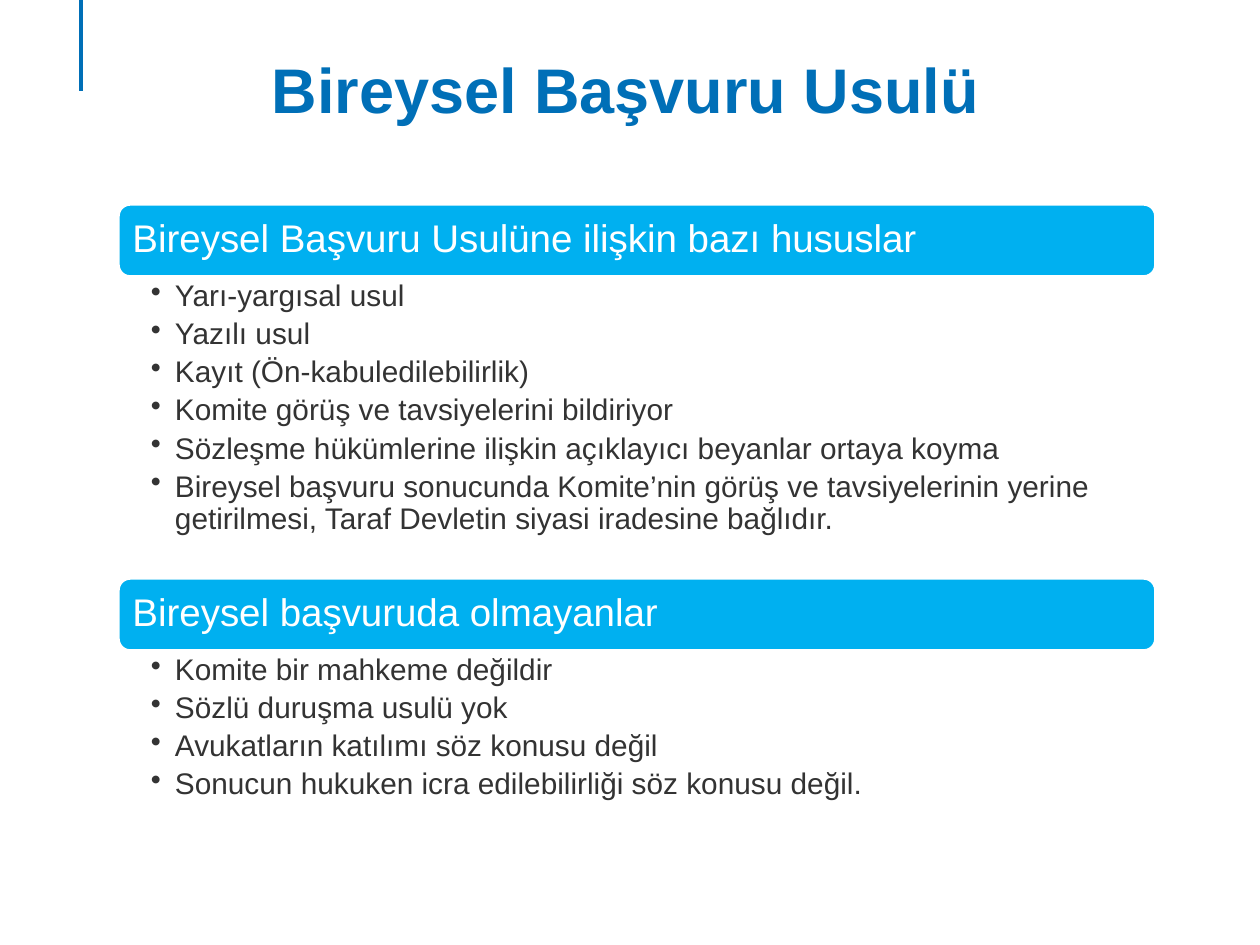
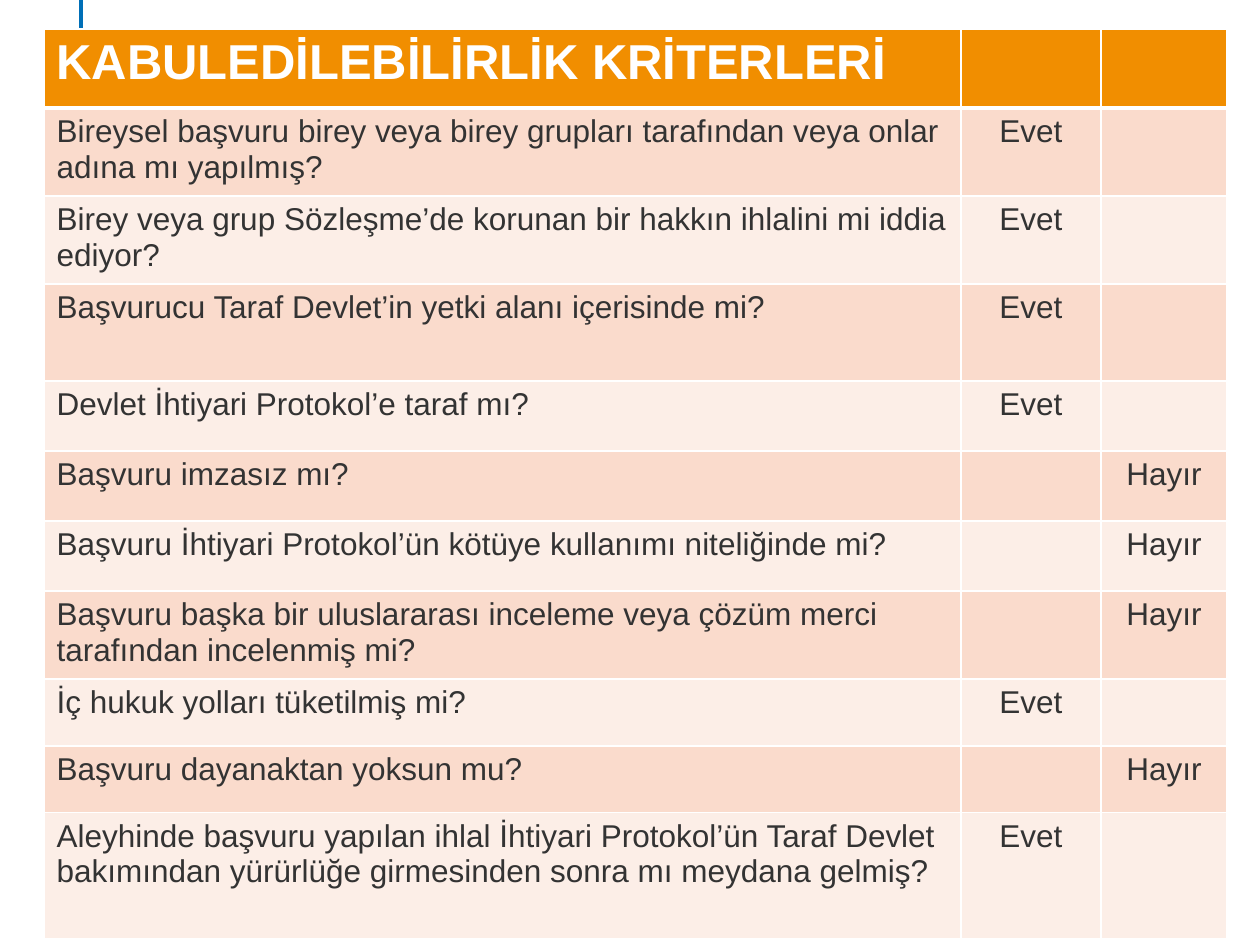
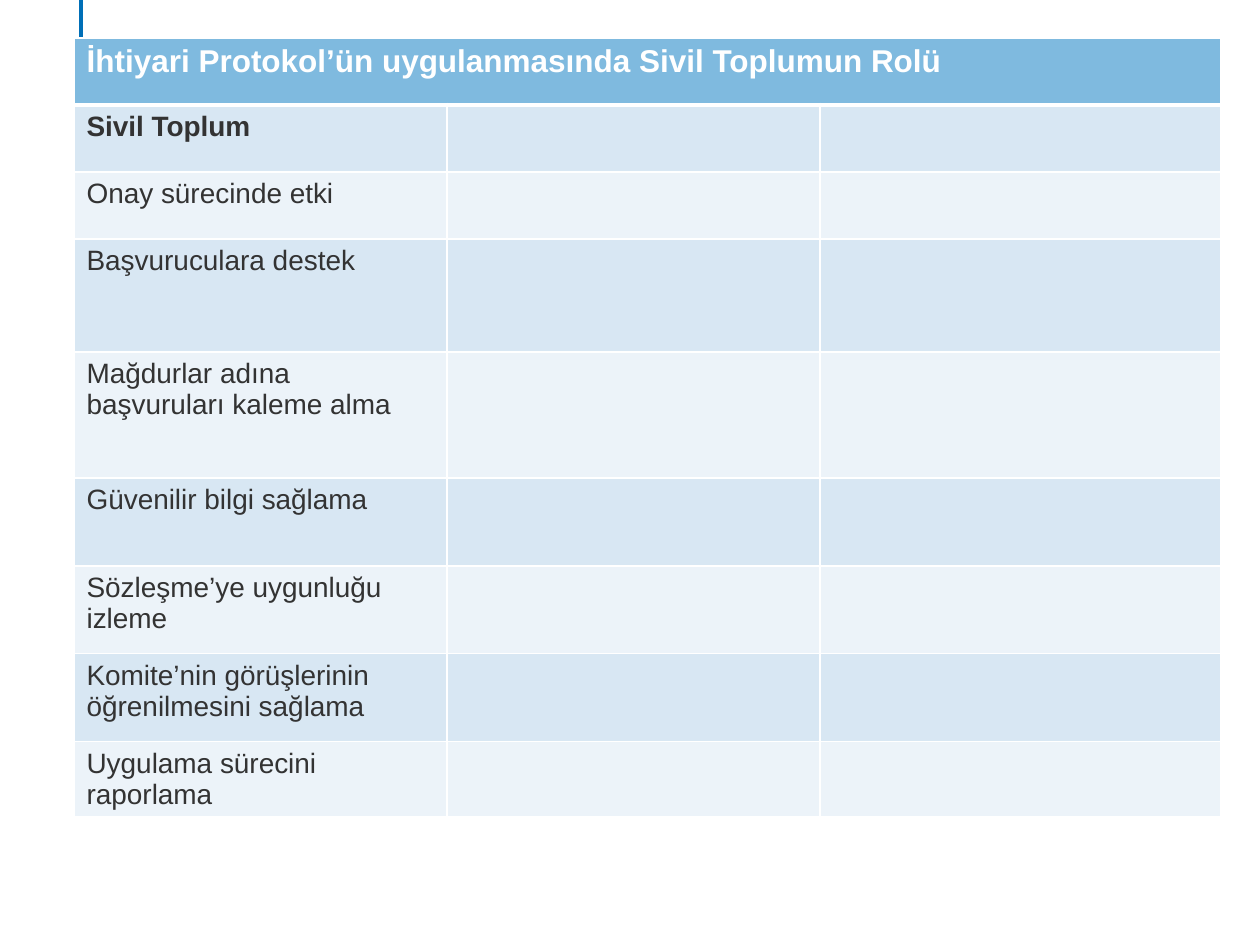
from dataclasses import dataclass

from lxml.etree import SubElement
from pptx import Presentation
from pptx.dml.color import RGBColor
from pptx.enum.shapes import MSO_CONNECTOR, MSO_SHAPE
from pptx.enum.text import MSO_ANCHOR, PP_ALIGN
from pptx.oxml.ns import qn
from pptx.util import Pt

PX = 914400 // 126  # EMU in one px


@dataclass(frozen=True)
class Theme:
    font: str = "Arial"
    blue: str = "006FB7"
    sky: str = "00B0F0"
    white: str = "FFFFFF"
    ink: str = "333333"
    warm: tuple = ("F18E00", "FADBCC", "FCEEE7")  # head, odd row, even row
    cool: tuple = ("7FBADF", "D8E7F3", "ECF3F9")
    title: int = 36
    banner: int = 28
    bar: int = 22
    body: int = 18
    item: int = 17
    small: int = 16


theme = Theme()


def write(par, text, size, color, bold=False, align=PP_ALIGN.LEFT):
    par.text = text
    par.alignment = align
    font = par.font
    font.name, font.size, font.bold = theme.font, Pt(size), bold
    font.color.rgb = RGBColor.from_string(color)


def add_grid(slide, left, top, cols, heights, rows, fills, sizes, strong=1):
    """Draw a ruled table; sizes are (head, body), strong counts the bold rows."""
    grid = slide.shapes.add_table(
        len(rows), len(cols), left * PX, top * PX, sum(cols) * PX, sum(heights) * PX).table
    grid.horz_banding = False
    for col, width in zip(grid.columns, cols):
        col.width = width * PX
    for r, (texts, height) in enumerate(zip(rows, heights)):
        grid.rows[r].height = height * PX
        for c, text in enumerate(texts):
            cell = grid.cell(r, c)
            props = cell._tc.get_or_add_tcPr()
            for side in ("lnL", "lnR", "lnT", "lnB"):
                thick = (r, side) in ((0, "lnB"), (1, "lnT"))
                edge = SubElement(props, qn("a:" + side), w=str(Pt(3 if thick else 1)))
                paint = SubElement(edge, qn("a:solidFill"))
                SubElement(paint, qn("a:srgbClr"), val=theme.white)
            cell.fill.solid()
            shade = fills[0] if r == 0 else fills[2 - r % 2]
            cell.fill.fore_color.rgb = RGBColor.from_string(shade)
            if text:
                write(cell.text_frame.paragraphs[0], text, sizes[min(r, 1)],
                      theme.ink if r else theme.white, r < strong,
                      PP_ALIGN.CENTER if c else PP_ALIGN.LEFT)
    return grid


deck = Presentation()
deck.slide_width, deck.slide_height = 1260 * PX, 945 * PX

# Slides with the shared accent line
slides = []
for _ in range(3):
    slide = deck.slides.add_slide(deck.slide_layouts[6])
    line = slide.shapes.add_connector(MSO_CONNECTOR.STRAIGHT, 81 * PX, 0, 81 * PX, 91 * PX)
    line.line.color.rgb = RGBColor.from_string(theme.blue)
    line.line.width = Pt(2)
    SubElement(line._element.spPr, qn("a:effectLst"))
    slides.append(slide)
usage, criteria, civil = slides

# Slide 1: title
box = usage.shapes.add_textbox(44 * PX, 38 * PX, 1163 * PX, 150 * PX)
frame = box.text_frame
frame.word_wrap = True
frame.margin_top = 13 * PX
write(frame.paragraphs[0], "Bireysel Başvuru Usulü", theme.title, theme.blue, True,
      PP_ALIGN.CENTER)

# Slide 1: bars, each with its list below
parts = [
    (204, 301, "Bireysel Başvuru Usulüne ilişkin bazı hususlar", [
        "Yarı-yargısal usul",
        "Yazılı usul",
        "Kayıt (Ön-kabuledilebilirlik)",
        "Komite görüş ve tavsiyelerini bildiriyor",
        "Sözleşme hükümlerine ilişkin açıklayıcı beyanlar ortaya koyma",
        "Bireysel başvuru sonucunda Komite’nin görüş ve tavsiyelerinin yerine "
        "getirilmesi, Taraf Devletin siyasi iradesine bağlıdır.",
    ]),
    (578, 154, "Bireysel başvuruda olmayanlar", [
        "Komite bir mahkeme değildir",
        "Sözlü duruşma usulü yok",
        "Avukatların katılımı söz konusu değil",
        "Sonucun hukuken icra edilebilirliği söz konusu değil.",
    ]),
]
for top, depth, head, items in parts:
    bar = usage.shapes.add_shape(
        MSO_SHAPE.ROUNDED_RECTANGLE, 118 * PX, top * PX, 1038 * PX, 73 * PX)
    bar.shadow.inherit = False
    bar.fill.solid()
    bar.fill.fore_color.rgb = RGBColor.from_string(theme.sky)
    bar.line.color.rgb = RGBColor.from_string(theme.white)
    bar.line.width = Pt(2)
    frame = bar.text_frame
    frame.vertical_anchor = MSO_ANCHOR.MIDDLE
    frame.margin_left = 11 * PX
    write(frame.paragraphs[0], head, theme.bar, theme.white)
    frame.paragraphs[0].line_spacing = 0.9

    box = usage.shapes.add_textbox(118 * PX, (top + 73) * PX, 1038 * PX, depth * PX)
    frame = box.text_frame
    frame.word_wrap = True
    frame.margin_left, frame.margin_right = 33 * PX, 21 * PX
    frame.margin_top = frame.margin_bottom = 4 * PX
    for i, item in enumerate(items):
        par = frame.add_paragraph() if i else frame.paragraphs[0]
        props = par._p.get_or_add_pPr()
        props.set("marL", str(24 * PX))
        props.set("indent", str(-24 * PX))
        SubElement(props, qn("a:buChar"), char="•")
        par.line_spacing = 0.9
        par.space_after = Pt(3.4)
        write(par, item, theme.item, theme.ink)

# Slide 2: admissibility criteria
yes, no = ("Evet", ""), ("", "Hayır")
tests = [
    ("KABULEDİLEBİLİRLİK KRİTERLERİ", "", ""),
    ("Bireysel başvuru birey veya birey grupları tarafından veya onlar adına mı yapılmış?", *yes),
    ("Birey veya grup Sözleşme’de korunan bir hakkın ihlalini mi iddia ediyor?", *yes),
    ("Başvurucu Taraf Devlet’in yetki alanı içerisinde mi?", *yes),
    ("Devlet İhtiyari Protokol’e taraf mı?", *yes),
    ("Başvuru imzasız mı?", *no),
    ("Başvuru İhtiyari Protokol’ün kötüye kullanımı niteliğinde mi?", *no),
    ("Başvuru başka bir uluslararası inceleme veya çözüm merci tarafından incelenmiş mi?", *no),
    ("İç hukuk yolları tüketilmiş mi?", *yes),
    ("Başvuru dayanaktan yoksun mu?", *no),
    ("Aleyhinde başvuru yapılan ihlal İhtiyari Protokol’ün Taraf Devlet bakımından "
     "yürürlüğe girmesinden sonra mı meydana gelmiş?", *yes),
]
add_grid(criteria, 44, 29, (917, 140, 126),
         (79, 88, 88, 97, 70, 70, 70, 88, 67, 67, 126),
         tests, theme.warm, (theme.banner, theme.body))

# Slide 3: role of civil society
roles = [
    "İhtiyari Protokol’ün uygulanmasında Sivil Toplumun Rolü",
    "Sivil Toplum",
    "Onay sürecinde etki",
    "Başvuruculara destek",
    "Mağdurlar adına başvuruları kaleme alma",
    "Güvenilir bilgi sağlama",
    "Sözleşme’ye uygunluğu izleme",
    "Komite’nin görüşlerinin öğrenilmesini sağlama",
    "Uygulama sürecini raporlama",
]
grid = add_grid(civil, 74, 38, (373, 373, 401),
                (67, 67, 67, 113, 126, 88, 88, 88, 75),
                [(role, "", "") for role in roles],
                theme.cool, (theme.body, theme.small), strong=2)
grid.cell(0, 0).merge(grid.cell(0, 2))

deck.save("out.pptx")
